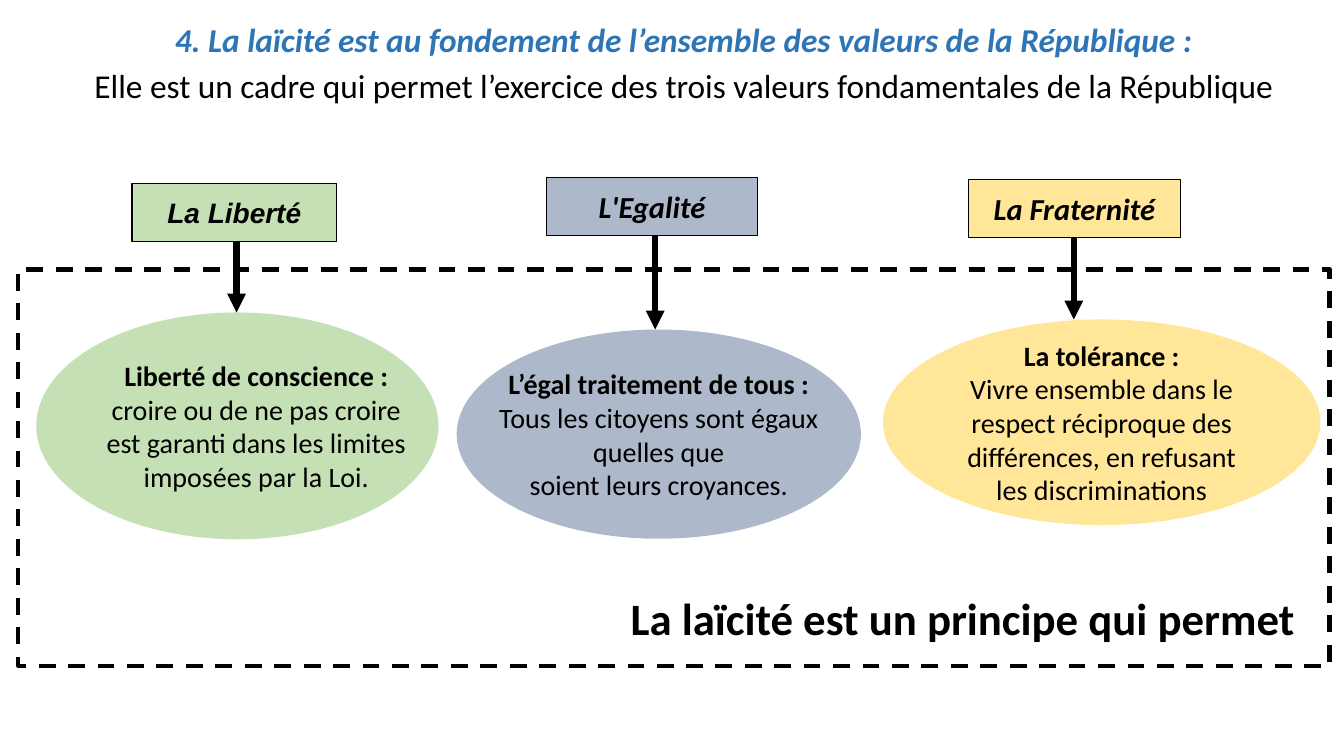
import pptx
import pptx.util
import pptx.dml.color
import pptx.enum.dml
import pptx.enum.shapes
import pptx.enum.text
import pptx.oxml.ns
import lxml.etree

Pt = pptx.util.Pt
Shape = pptx.enum.shapes.MSO_SHAPE
Align = pptx.enum.text.PP_ALIGN


def color(code):
    return pptx.dml.color.RGBColor.from_string(code)


def write(frame, lines, size, face="Calibri", align=Align.CENTER):
    for i, (text, bold, slant, ink) in enumerate(lines):
        para = frame.paragraphs[0] if i == 0 else frame.add_paragraph()
        para.text = text
        para.alignment = align
        para.font.name = face
        para.font.size = Pt(size)
        para.font.bold = bold
        para.font.italic = slant
        para.font.color.rgb = color(ink)


deck = pptx.Presentation()
deck.slide_width = Pt(960)
deck.slide_height = Pt(540)
slide = deck.slides.add_slide(deck.slide_layouts[6])
shapes = slide.shapes

values = [
    ("La Liberté", "Arial", 20, "C5E0B4", (94.3, 131, 146.2, 41.3),
     (25.9, 223.2, 287.3, 162), 34, False,
     ["Liberté de conscience :", "croire ou de ne pas croire",
      "est garanti dans les limites", "imposées par la Loi."]),
    ("L'Egalité", "Calibri", 21.8, "ADB9CA", (390.2, 126.7, 151.2, 41.3),
     (326.2, 235.4, 288.7, 149.4), 7, False,
     ["L’égal traitement de tous :", "Tous les citoyens sont égaux",
      "quelles que", "soient leurs croyances."]),
    ("La Fraternité", "Calibri", 21.8, "FFE699", (691.9, 128.2, 151.2, 41.3),
     (630.7, 228.2, 312.5, 146.9), 7, True,
     ["La tolérance :", "Vivre ensemble dans le",
      "respect réciproque des différences, en refusant les discriminations"]),
]

for i, (name, face, size, fill, box, oval, inset, wrap, lines) in enumerate(values):
    label = shapes.add_shape(Shape.RECTANGLE, *map(Pt, box))
    label.line.color.rgb = color("000000")
    label.line.width = Pt(0)
    write(label.text_frame, [(name, True, True, "000000")], size, face)

    bubble = shapes.add_shape(Shape.OVAL, *map(Pt, oval))
    bubble.line.fill.background()
    body = [(line, n == 0, False, "000000") for n, line in enumerate(lines)]
    write(bubble.text_frame, body, 20)

    for shape, left, fold in ((label, 7, False), (bubble, inset, wrap)):
        shape.shadow.inherit = False
        shape.fill.solid()
        shape.fill.fore_color.rgb = color(fill)
        frame = shape.text_frame
        frame.word_wrap = fold
        frame.vertical_anchor = pptx.enum.text.MSO_ANCHOR.MIDDLE
        frame.margin_left = Pt(left)
        frame.margin_right = Pt(7)
        frame.margin_top = frame.margin_bottom = Pt(3)

    x = 169 + 299 * i
    arrow = shapes.add_connector(pptx.enum.shapes.MSO_CONNECTOR.STRAIGHT,
                                 Pt(x), Pt(box[1] + box[3]), Pt(x), Pt(oval[1]))
    arrow.line.color.rgb = color("000000")
    arrow.line.width = Pt(4.5)
    lxml.etree.SubElement(arrow.line._get_or_add_ln(),
                          pptx.oxml.ns.qn("a:tailEnd"), type="triangle")
    lxml.etree.SubElement(arrow._element.spPr, pptx.oxml.ns.qn("a:effectLst"))

title = shapes.add_textbox(Pt(54.7), Pt(15.8), Pt(866.9), Pt(78.5))
title.text_frame.word_wrap = True
write(title.text_frame, [
    ("4. La laïcité est au fondement de l’ensemble des valeurs de la République :",
     True, True, "2E75B6"),
    ("Elle est un cadre qui permet l’exercice des trois valeurs fondamentales de la République",
     False, False, "000000"),
], 23.8)
for para in title.text_frame.paragraphs:
    para.line_spacing = 0.8
    para.space_before = Pt(10)

border = shapes.add_shape(Shape.RECTANGLE, Pt(13), Pt(192.5), Pt(936.7), Pt(283))
border.shadow.inherit = False
border.fill.background()
border.line.color.rgb = color("000000")
border.line.width = Pt(3)
border.line.dash_style = pptx.enum.dml.MSO_LINE.DASH

closing = shapes.add_textbox(Pt(355), Pt(418.3), Pt(577.4), Pt(44.6))
closing.text_frame.word_wrap = True
write(closing.text_frame,
      [("La laïcité est un principe qui permet", True, False, "000000")],
      32, align=Align.RIGHT)

deck.save("out.pptx")
